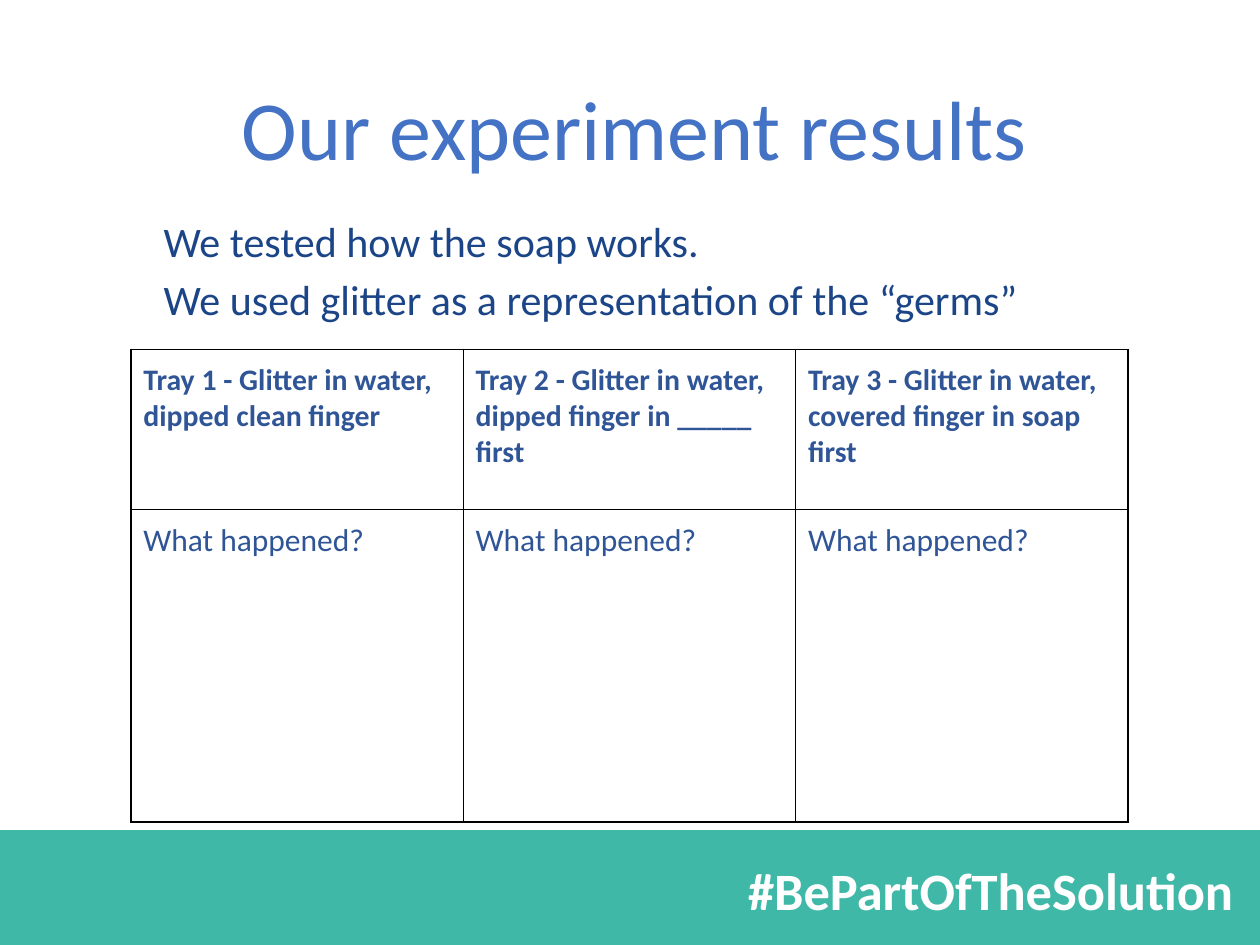
from lxml import etree
from pptx import Presentation
from pptx import util as u
from pptx.dml.color import RGBColor
from pptx.enum import shapes, text
from pptx.oxml import ns

COLORS = {
    "teal": "40B8A8",
    "white": "FFFFFF",
    "title": "4472C4",
    "body": "1C4587",
    "table": "2F5597",
    "border": "000000",
}


def add_run(paragraph, words, size, color, bold=False):
    run = paragraph.add_run()
    run.text = words
    run.font.name = "Calibri"
    run.font.size = u.Pt(size)
    run.font.bold = bold
    run.font.color.rgb = RGBColor.from_string(COLORS[color])


def add_text_box(left, top, width, height, inset=0.13):
    box = slide.shapes.add_textbox(u.Cm(left), u.Cm(top), u.Cm(width), u.Cm(height))
    frame = box.text_frame
    frame.word_wrap = True
    frame.margin_top = frame.margin_bottom = u.Cm(inset)
    frame.margin_left = frame.margin_right = u.Cm(0.25)
    return frame


presentation = Presentation()
presentation.slide_width = u.Cm(25.4)
presentation.slide_height = u.Cm(19.05)
slide = presentation.slides.add_slide(presentation.slide_layouts[6])

footer = slide.shapes.add_shape(
    shapes.MSO_SHAPE.RECTANGLE, u.Cm(0), u.Cm(16.76), u.Cm(25.4), u.Cm(2.29))
footer.shadow.inherit = False
footer.fill.solid()
footer.fill.fore_color.rgb = RGBColor.from_string(COLORS["teal"])
footer.line.color.rgb = RGBColor.from_string(COLORS["teal"])
footer.line.width = u.Pt(1)

hashtag = add_text_box(13.77, 17.17, 11.35, 1.55).paragraphs[0]
hashtag.alignment = text.PP_ALIGN.RIGHT
add_run(hashtag, "#BePartOfTheSolution", 30, "white", True)

title_frame = add_text_box(1.57, 1.4, 22.45, 2.57)
title_frame.vertical_anchor = text.MSO_ANCHOR.MIDDLE
title = title_frame.paragraphs[0]
title.alignment = text.PP_ALIGN.CENTER
title.line_spacing = 0.9
add_run(title, "Our experiment results", 48, "title")

rows = [
    ["Tray 1 - Glitter in water, dipped clean finger",
     "Tray 2 - Glitter in water, dipped finger in _____ first",
     "Tray 3 - Glitter in water, covered finger in soap first"],
    ["What happened?"] * 3,
]
row_heights = [3.23, 6.3]
row_sizes = [17, 18]
column_width = 6.7

table = slide.shapes.add_table(
    2, 3, u.Cm(2.64), u.Cm(7.04), u.Cm(3 * column_width), u.Cm(sum(row_heights))).table
table.first_row = False
table.horz_banding = False
for column in table.columns:
    column.width = u.Cm(column_width)

for row_index, labels in enumerate(rows):
    table.rows[row_index].height = u.Cm(row_heights[row_index])
    for column_index, label in enumerate(labels):
        cell = table.cell(row_index, column_index)
        cell.margin_left = cell.margin_right = u.Cm(0.25)
        cell.margin_top = cell.margin_bottom = u.Cm(0.25)
        properties = cell._tc.get_or_add_tcPr()
        for side in ("lnL", "lnR", "lnT", "lnB"):
            border = etree.SubElement(properties, ns.qn("a:" + side), w=str(u.Pt(0.75)))
            fill = etree.SubElement(border, ns.qn("a:solidFill"))
            etree.SubElement(fill, ns.qn("a:srgbClr"), val=COLORS["border"])
        cell.fill.background()
        add_run(cell.text_frame.paragraphs[0], label,
                row_sizes[row_index], "table", row_index == 0)

intro_lines = [
    "We tested how the soap works.",
    "We used glitter as a representation of the “germs”",
]
intro = add_text_box(3.05, 3.94, 19.08, 3.63, 0.25)
for index, line in enumerate(intro_lines):
    paragraph = intro.add_paragraph() if index else intro.paragraphs[0]
    paragraph.line_spacing = 1.15
    add_run(paragraph, line, 24, "body")

presentation.save("out.pptx")
